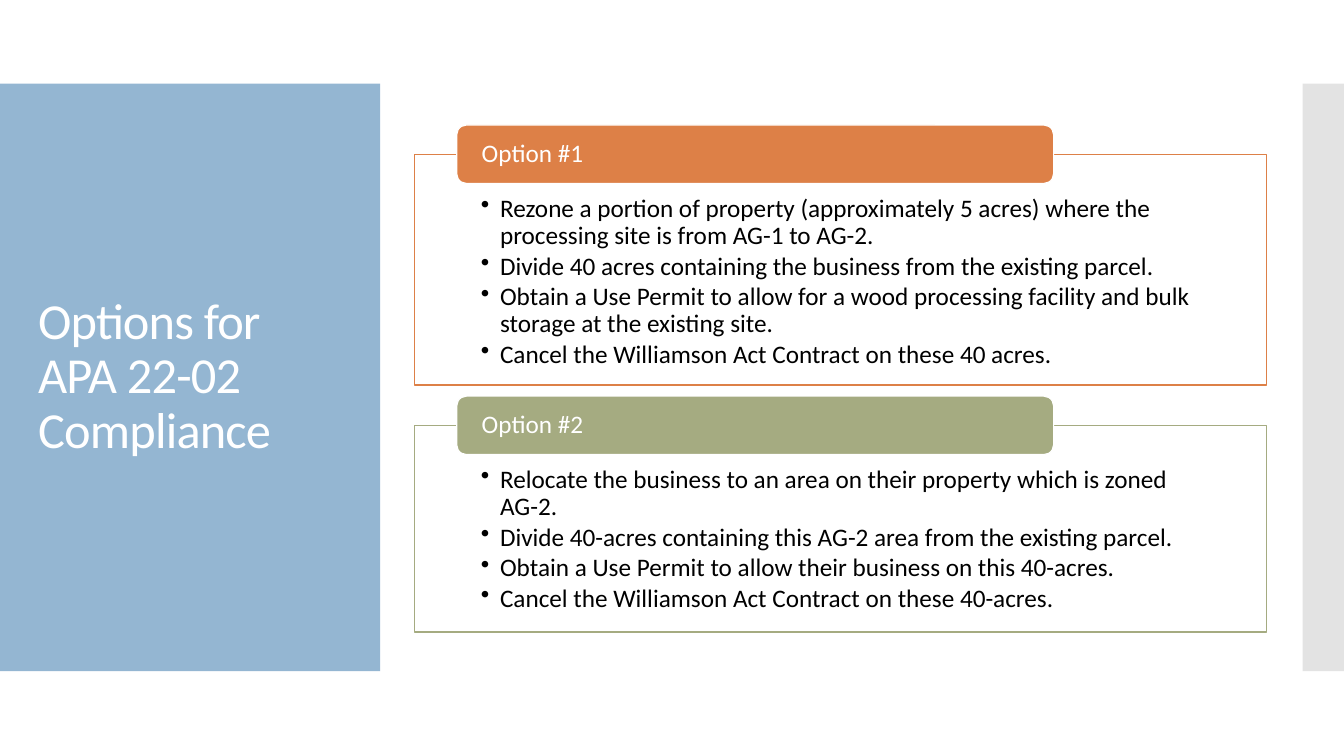
from dataclasses import dataclass

from lxml.etree import SubElement
from pptx import Presentation
from pptx.dml.color import RGBColor as Rgb
from pptx.enum.shapes import MSO_SHAPE as Shape
from pptx.enum.text import MSO_ANCHOR as Anchor, PP_ALIGN as Align
from pptx.oxml.ns import qn
from pptx.util import Inches, Pt


@dataclass(frozen=True)
class Theme:
    font: str = "Calibri"
    title_size: float = 36
    body_size: float = 18
    outline: float = 0.85
    white: str = "FFFFFF"
    black: str = "000000"
    blue: str = "94B6D2"
    gray: str = "C8C8C8"
    orange: str = "DD8047"
    green: str = "A5AB81"


OPTIONS = [
    ("Option #1", 1.53, 2.29, "orange", [
        "Rezone a portion of property (approximately 5 acres) where the processing site is from AG-1 to AG-2.",
        "Divide 40 acres containing the business from the existing parcel.",
        "Obtain a Use Permit to allow for a wood processing facility and bulk storage at the existing site.",
        "Cancel the Williamson Act Contract on these 40 acres.",
    ]),
    ("Option #2", 4.22, 2.05, "green", [
        "Relocate the business to an area on their property which is zoned AG-2.",
        "Divide 40-acres containing this AG-2 area from the existing parcel.",
        "Obtain a Use Permit to allow their business on this 40-acres.",
        "Cancel the Williamson Act Contract on these 40-acres.",
    ]),
]


def write(frame, text, *, font, size, color, first=True, bullet=None, after=0, tracking=None):
    paragraph = frame.paragraphs[0] if first else frame.add_paragraph()
    paragraph.alignment = Align.LEFT
    paragraph.line_spacing = 0.9
    paragraph.space_after = Pt(after)
    if bullet:
        paragraph.level = 1
        properties = paragraph._p.get_or_add_pPr()
        properties.set("marL", str(Inches(0.19)))
        properties.set("indent", str(Inches(-0.19)))
        SubElement(properties, qn("a:buChar"), char=bullet)
    run = paragraph.add_run()
    run.text = text
    run.font.name = font
    run.font.size = Pt(size)
    run.font.color.rgb = Rgb.from_string(color)
    if tracking:
        run._r.get_or_add_rPr().set("spc", str(round(tracking * 100)))


class OptionsSlide:
    def __init__(self, deck, theme):
        self.theme = theme
        self.slide = deck.slides.add_slide(deck.slide_layouts[6])

    def block(self, left, top, width, height, fill, line=None, alpha=None, kind=Shape.RECTANGLE):
        block = self.slide.shapes.add_shape(
            kind, Inches(left), Inches(top), Inches(width), Inches(height))
        block.shadow.inherit = False
        block.fill.solid()
        block.fill.fore_color.rgb = Rgb.from_string(fill)
        if alpha:
            tint = block.fill._xPr.find(f".//{qn('a:srgbClr')}")
            SubElement(tint, qn("a:alpha"), val=str(alpha * 1000))
        if line:
            block.line.color.rgb = Rgb.from_string(line)
            block.line.width = Pt(self.theme.outline)
        else:
            block.line.fill.background()
        return block

    def frame(self, holder, anchor, insets):
        frame = holder.text_frame
        frame.word_wrap = True
        frame.vertical_anchor = anchor
        (frame.margin_left, frame.margin_top,
         frame.margin_right, frame.margin_bottom) = map(Inches, insets)
        return frame

    def title(self, text):
        theme = self.theme
        heading = self.slide.shapes.add_textbox(
            Inches(0.28), Inches(1.23), Inches(3.22), Inches(5.03))
        frame = self.frame(heading, Anchor.MIDDLE, (0.1, 0.05, 0.1, 0.05))
        write(frame, text, font=theme.font, size=theme.title_size,
              color=theme.white, tracking=-0.6)

    def option(self, label, top, height, accent, steps):
        theme = self.theme
        panel = self.block(4.11, top, 8.45, height, theme.white, line=accent, alpha=90)
        frame = self.frame(panel, Anchor.TOP, (0.66, 0.41, 0.66, 0.14))
        for index, step in enumerate(steps):
            write(frame, step, font=theme.font, size=theme.body_size, color=theme.black,
                  first=index == 0, bullet="•", after=2.4)
        tab = self.block(4.53, top - 0.29, 5.92, 0.58, accent, line=theme.white,
                         kind=Shape.ROUNDED_RECTANGLE)
        write(self.frame(tab, Anchor.MIDDLE, (0.22, 0, 0.22, 0)), label,
              font=theme.font, size=theme.body_size, color=theme.white)


def main():
    deck = Presentation()
    deck.slide_width, deck.slide_height = Inches(13.33), Inches(7.5)
    theme = Theme()
    page = OptionsSlide(deck, theme)
    page.block(0, 0.83, 3.77, 5.83, theme.blue)
    page.block(12.92, 0.83, 0.41, 5.83, theme.gray, alpha=50)
    page.title("Options for APA 22-02 Compliance")
    for label, top, height, accent, steps in OPTIONS:
        page.option(label, top, height, getattr(theme, accent), steps)
    deck.save("out.pptx")


if __name__ == "__main__":
    main()
